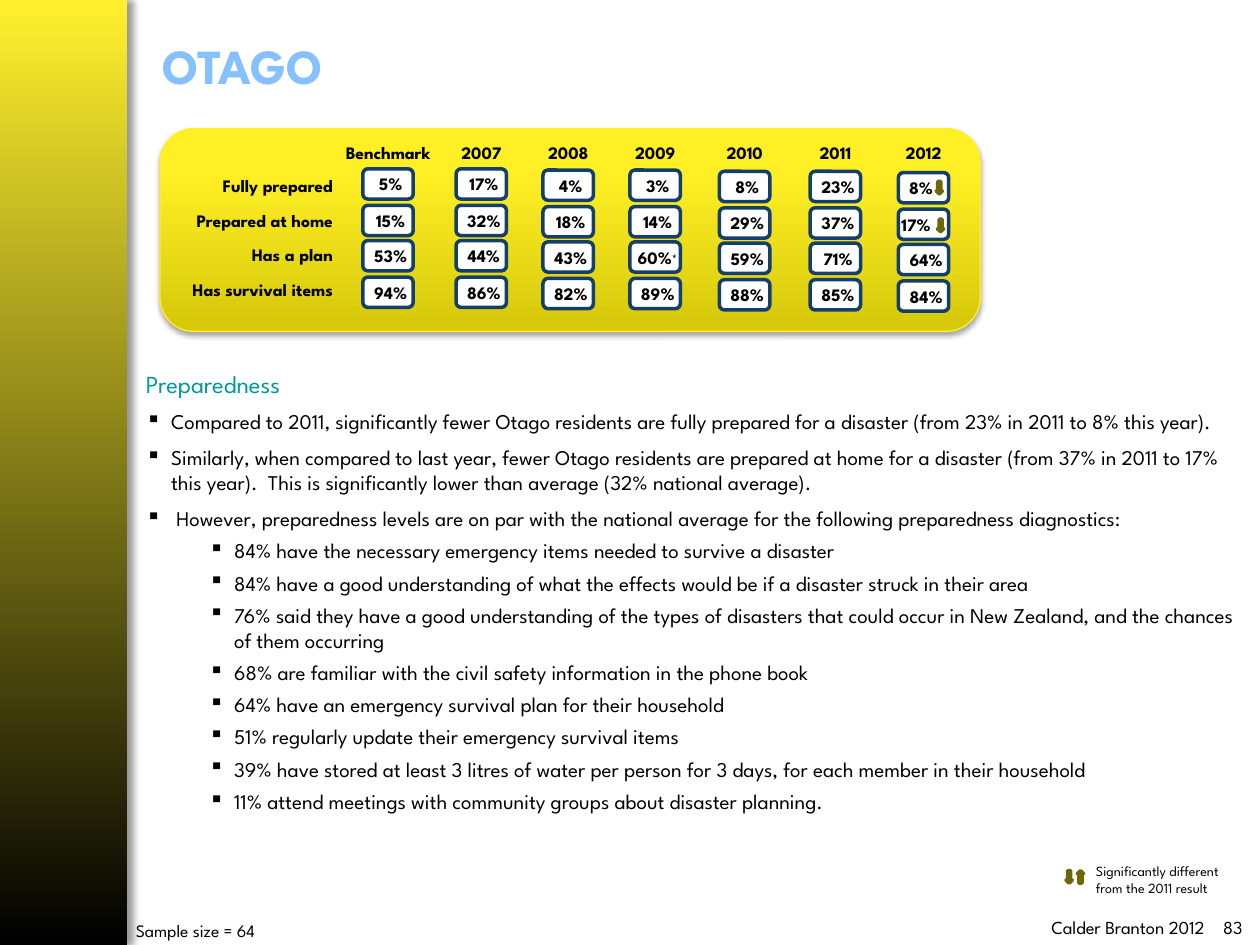
from pptx import Presentation
from pptx.dml.color import RGBColor
from pptx.enum.shapes import MSO_SHAPE as Preset
from pptx.enum.text import MSO_ANCHOR as Anchor, PP_ALIGN as Align
from pptx.oxml import parse_xml
from pptx.oxml.ns import nsdecls, qn
from pptx.util import Pt

PX = 9144
FONT = "League Spartan"
COLORS = {
    "text": "000000", "title": "85C0FF", "heading": "009999", "cell": "FFFFFF",
    "cell_line": "143F6C", "panel_top": "FFF025", "panel_bottom": "D6C80A",
    "panel_line": "FFF027", "bar_top": "FFF12D", "bar_bottom": "000000",
    "arrow": "958B0D", "arrow_line": "6E670A", "shadow": "000000",
}
ROWS = ["Fully prepared", "Prepared at home", "Has a plan", "Has survival items"]
COLUMNS = [
    ("Benchmark", 161, 32, ["5%", "15%", "53%", "94%"]),
    ("2007", 235, 32, ["17%", "32%", "44%", "86%"]),
    ("2008", 304, 33, ["4%", "18%", "43%", "82%"]),
    ("2009", 373, 33, ["3%", "14%", "60%", "89%"]),
    ("2010", 444, 34, ["8%", "29%", "59%", "88%"]),
    ("2011", 516, 34, ["23%", "37%", "71%", "85%"]),
    ("2012", 586, 35, ["8%", "17%", "64%", "84%"]),
]
FOOTNOTES = {("2009", 2): "*"}
FALLS = {("2012", 0): (30, 7, 4), ("2012", 1): (31, 8, 12)}
FINDINGS = [
    "Compared to 2011, significantly fewer Otago residents are fully prepared for a disaster "
    "(from 23% in 2011 to 8% this year).",
    "Similarly, when compared to last year, fewer Otago residents are prepared at home for a disaster "
    "(from 37% in 2011 to 17% this year).  This is significantly lower than average (32% national average).",
    " However, preparedness levels are on par with the national average for the following "
    "preparedness diagnostics:",
]
DIAGNOSTICS = [
    "84% have the necessary emergency items needed to survive a disaster",
    "84% have a good understanding of what the effects would be if a disaster struck in their area",
    "76% said they have a good understanding of the types of disasters that could occur in New Zealand, "
    "and the chances of them occurring",
    "68% are familiar with the civil safety information in the phone book",
    "64% have an emergency survival plan for their household",
    "51% regularly update their emergency survival items",
    "39% have stored at least 3 litres of water per person for 3 days, for each member in their household",
    "11% attend meetings with community groups about disaster planning.",
]


def scaled(*lengths):
    """Turn px lengths into EMU."""
    return [length * PX for length in lengths]


def assign(target, **values):
    """Set several attributes of one object."""
    for name, value in values.items():
        setattr(target, name, value)


def add_run(paragraph, text, size, color="text", bold=False):
    """Append a formatted run to a paragraph."""
    run = paragraph.add_run()
    run.text = text
    assign(run.font, name=FONT, size=Pt(size), bold=bold)
    run.font.color.rgb = RGBColor.from_string(COLORS[color])


def add_label(shapes, box, text, size, align=Align.LEFT, bold=False, wrap=True, spacing=None):
    """Add a text box with one paragraph."""
    frame = shapes.add_textbox(*scaled(*box)).text_frame
    frame.word_wrap = wrap
    paragraph = frame.paragraphs[0]
    assign(paragraph, alignment=align, line_spacing=spacing)
    add_run(paragraph, text, size, bold=bold)


def add_solid(shapes, preset, box, fill, line, width):
    """Add a preset shape with a plain fill and outline."""
    shape = shapes.add_shape(preset, *scaled(*box))
    shape.shadow.inherit = False
    shape.fill.solid()
    shape.fill.fore_color.rgb = RGBColor.from_string(COLORS[fill])
    shape.line.color.rgb = RGBColor.from_string(COLORS[line])
    shape.line.width = Pt(width)
    return shape


def add_arrow(shapes, left, top, falling=False):
    """Add a small marker for a rise or a fall."""
    arrow = add_solid(shapes, Preset.UP_ARROW, (left, top, 5, 10), "arrow", "arrow_line", 2)
    arrow.rotation = 180 if falling else 0


def add_gradient(shapes, preset, box, stops, shadow):
    """Add a shape with a downward gradient and an outer shadow."""
    shape = shapes.add_shape(preset, *scaled(*box))
    properties = shape.element.spPr
    marks = "".join(
        f'<a:gs pos="{position * 1000}"><a:srgbClr val="{COLORS[color]}"/></a:gs>'
        for position, color in stops
    )
    properties.insert(2, parse_xml(
        f'<a:gradFill {nsdecls("a")} rotWithShape="1"><a:gsLst>{marks}</a:gsLst>'
        '<a:lin ang="5400000" scaled="0"/></a:gradFill>'))
    shape.line.fill.background()
    shape.shadow.inherit = False
    alpha, blur, distance, angle = shadow
    properties.find(qn("a:effectLst")).append(parse_xml(
        f'<a:outerShdw {nsdecls("a")} blurRad="{Pt(blur)}" dist="{Pt(distance)}" '
        f'dir="{angle * 60000}" algn="ctr" rotWithShape="0"><a:srgbClr val="{COLORS["shadow"]}">'
        f'<a:alpha val="{alpha * 1000}"/></a:srgbClr></a:outerShdw>'))
    return shape


def add_cell(shapes, left, top, value, footnote, right_inset):
    """Add one percentage cell of the results panel."""
    cell = add_solid(shapes, Preset.ROUNDED_RECTANGLE, (left, top, 40, 24), "cell", "cell_line", 2)
    frame = cell.text_frame
    assign(frame, word_wrap=False, vertical_anchor=Anchor.MIDDLE, margin_top=0, margin_bottom=0,
           margin_left=0 if right_inset else 4 * PX, margin_right=right_inset * PX)
    paragraph = frame.paragraphs[0]
    paragraph.alignment = Align.CENTER
    add_run(paragraph, value, 10, bold=True)
    if footnote:
        add_run(paragraph, footnote, 8)


def add_panel(shapes, box):
    """Build the yellow panel of results by year."""
    left, top = box[:2]
    panel = add_gradient(shapes, Preset.ROUNDED_RECTANGLE, box,
                         [(0, "panel_top"), (20, "panel_top"), (100, "panel_bottom")],
                         (35, 3.1, 1.8, 90))
    panel.line.color.rgb = RGBColor.from_string(COLORS["panel_line"])
    panel.line.width = Pt(0.75)
    for row, text in enumerate(ROWS):
        add_label(shapes, (left + 3, top + 35 + round(row * 83 / 3), 144, 24), text, 10,
                  Align.RIGHT, bold=True, wrap=False, spacing=0.8)
    for year, offset, first, values in COLUMNS:
        width = 98 if year == "Benchmark" else 52
        cell_left = left + offset
        add_label(shapes, (cell_left + 20 - width // 2, top + 6, width, 27), year, 10,
                  Align.CENTER, bold=True, wrap=False)
        for row, value in enumerate(values):
            cell_top = top + first + round(row * 86 / 3)
            right, down, inset = FALLS.get((year, row), (0, 0, 0))
            add_cell(shapes, cell_left, cell_top, value, FOOTNOTES.get((year, row)), inset)
            if inset:
                add_arrow(shapes, cell_left + right, cell_top + down, falling=True)


def add_commentary(shapes, box):
    """Write the heading and its two levels of bullets."""
    frame = shapes.add_textbox(*scaled(*box)).text_frame
    frame.word_wrap = True
    add_run(frame.paragraphs[0], "Preparedness", 14, "heading")
    for level, indent, space, texts in [(0, 20, 6, FINDINGS), (1, 70, 4, DIAGNOSTICS)]:
        for text in texts:
            paragraph = frame.add_paragraph()
            properties = paragraph._p.get_or_add_pPr()
            properties.set("marL", str(indent * PX))
            properties.set("indent", str(-20 * PX))
            properties.append(parse_xml(f'<a:buChar {nsdecls("a")} char="▪"/>'))
            assign(paragraph, level=level, space_before=Pt(space))
            add_run(paragraph, text, 12)


def add_legend(shapes, box):
    """Group the arrows with their explanation."""
    left, top, width, height = box
    group = shapes.add_group_shape().shapes
    add_arrow(group, left, top + 11, falling=True)
    add_arrow(group, left + 9, top + 11)
    add_label(group, (left + 14, top, width - 14, height),
              "Significantly different from the 2011 result", 8)


def add_footer(shapes, box):
    """Place the sample size, the source and the page number."""
    left, top, width, height = box
    add_label(shapes, (left, top + 3, 203, 27), "Sample size = 64", 10)
    add_label(shapes, (left + width - 354, top, 324, height), "Calder Branton 2012", 10.5, Align.RIGHT)
    add_label(shapes, (left + width - 40, top, 40, height), "83", 10.5, Align.RIGHT)


def add_title(slide, box):
    """Move and format the title placeholder."""
    title = slide.shapes.title
    for name, value in zip(("left", "top", "width", "height"), scaled(*box)):
        setattr(title, name, value)
    title.text_frame.vertical_anchor = Anchor.MIDDLE
    paragraph = title.text_frame.paragraphs[0]
    paragraph.alignment = Align.LEFT
    add_run(paragraph, "OTAGO", 28, "title", bold=True)


def main():
    """Build and save the slide."""
    presentation = Presentation()
    presentation.slide_width, presentation.slide_height = scaled(1000, 750)
    slide = presentation.slides.add_slide(presentation.slide_layouts[5])
    shapes = slide.shapes
    add_gradient(shapes, Preset.RECTANGLE, (0, 0, 101, 750),
                 [(0, "bar_top"), (100, "bar_bottom")], (40, 4, 3, 0))
    add_title(slide, (119, 14, 881, 75))
    add_panel(shapes, (127, 102, 651, 161))
    add_commentary(shapes, (106, 288, 892, 442))
    add_legend(shapes, (846, 680, 154, 37))
    add_footer(shapes, (98, 722, 898, 29))
    presentation.save("out.pptx")


if __name__ == "__main__":
    main()
